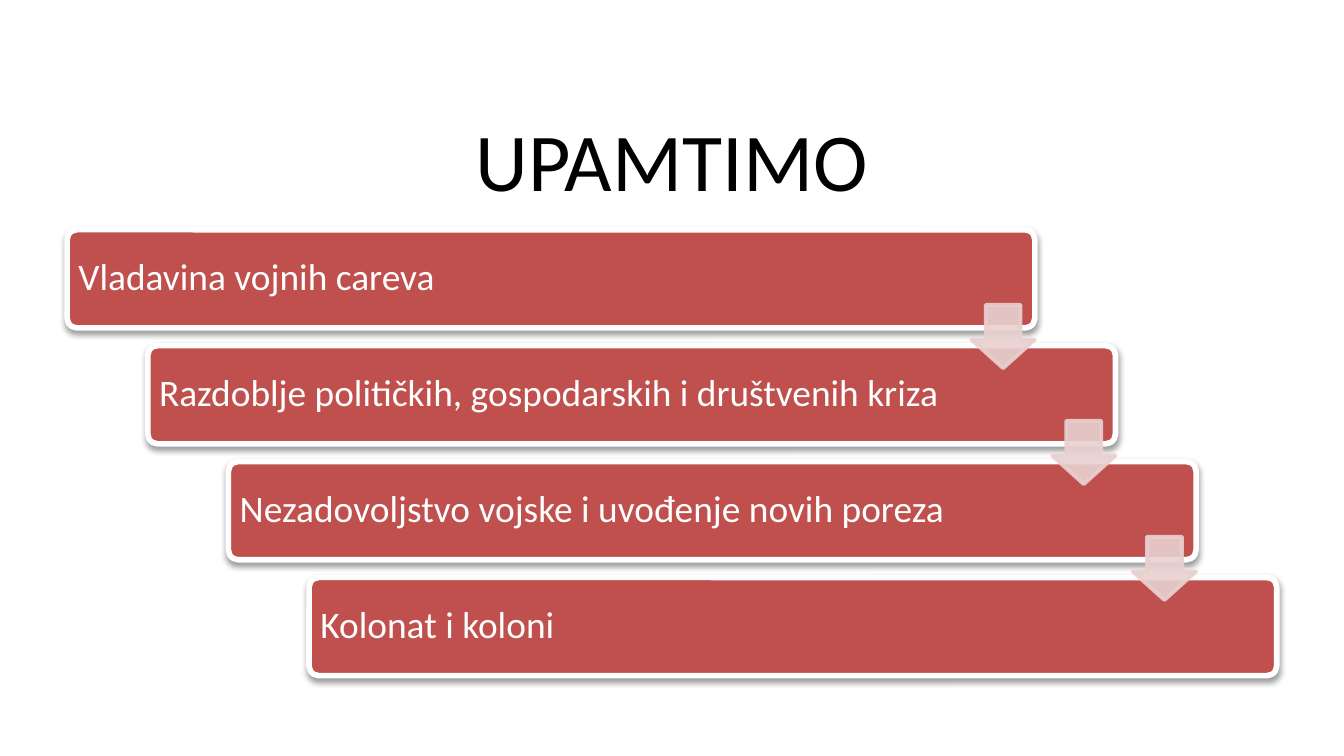
from lxml.etree import SubElement
from pptx import Presentation
from pptx.dml.color import RGBColor
from pptx.enum.shapes import MSO_SHAPE
from pptx.enum.text import MSO_ANCHOR, PP_ALIGN
from pptx.oxml.ns import qn
from pptx.util import Pt

COLORS = {"title": "000000", "bar": "C0504D", "light": "FFFFFF", "arrow": "E8D0D0", "shadow": "000000"}
STEPS = [
    "Vladavina vojnih careva",
    "Razdoblje političkih, gospodarskih i društvenih kriza",
    "Nezadovoljstvo vojske i uvođenje novih poreza",
    "Kolonat i koloni",
]
STEP_X, STEP_Y = 43.2, 62.1
BAR_LEFT, BAR_TOP, BAR_WIDTH, BAR_HEIGHT = 36, 123.1, 518.4, 52.6
ARROW_LEFT, ARROW_TOP, ARROW_SIZE = 520.4, 163.3, 34


class StaircaseSlide:
    font_name = "Calibri"

    def __init__(self, presentation):
        self.slide = presentation.slides.add_slide(presentation.slide_layouts[5])

    def set_text(self, text_frame, text, size, color, align):
        text_frame.text = text
        text_frame.word_wrap = True
        text_frame.vertical_anchor = MSO_ANCHOR.MIDDLE
        paragraph = text_frame.paragraphs[0]
        paragraph.alignment = align
        paragraph.line_spacing = 0.9
        font = paragraph.runs[0].font
        font.name = self.font_name
        font.size = Pt(size)
        font.color.rgb = RGBColor.from_string(COLORS[color])

    def title(self, text, left, top, width, height):
        title = self.slide.shapes.title
        title.left, title.top, title.width, title.height = Pt(left), Pt(top), Pt(width), Pt(height)
        self.set_text(title.text_frame, text, 44, "title", PP_ALIGN.CENTER)

    def shape(self, kind, left, top, width, height, fill, line, line_width):
        shape = self.slide.shapes.add_shape(kind, Pt(left), Pt(top), Pt(width), Pt(height))
        shape.shadow.inherit = False
        shape.fill.solid()
        shape.fill.fore_color.rgb = RGBColor.from_string(COLORS[fill])
        shape.line.color.rgb = RGBColor.from_string(COLORS[line])
        shape.line.width = Pt(line_width)
        return shape

    def bar(self, text, left, top):
        shape = self.shape(MSO_SHAPE.ROUNDED_RECTANGLE, left, top, BAR_WIDTH, BAR_HEIGHT, "bar", "light", 3)
        shape.adjustments[0] = 0.1
        effects = shape._element.spPr.find(qn("a:effectLst"))
        shadow = SubElement(effects, qn("a:outerShdw"), blurRad=str(Pt(3.1)), dist=str(Pt(1.6)),
                            dir="5400000", rotWithShape="0")
        color = SubElement(shadow, qn("a:srgbClr"), val=COLORS["shadow"])
        SubElement(color, qn("a:alpha"), val="38000")
        frame = shape.text_frame
        frame.margin_left = frame.margin_right = frame.margin_top = frame.margin_bottom = Pt(4.5)
        self.set_text(frame, text, 20, "light", PP_ALIGN.LEFT)

    def arrow(self, left, top):
        shape = self.shape(MSO_SHAPE.DOWN_ARROW, left, top, ARROW_SIZE, ARROW_SIZE, "arrow", "arrow", 2)
        shape.adjustments[0] = 0.55
        shape.adjustments[1] = 0.45
        for color in shape._element.spPr.iter(qn("a:srgbClr")):
            SubElement(color, qn("a:alpha"), val="90000")


def main():
    presentation = Presentation()
    presentation.slide_width, presentation.slide_height = Pt(720), Pt(405)
    staircase = StaircaseSlide(presentation)
    staircase.title("UPAMTIMO", 36, 60.5, 648, 56)
    for index, text in enumerate(STEPS):
        staircase.bar(text, BAR_LEFT + index * STEP_X, BAR_TOP + index * STEP_Y)
    for index in range(len(STEPS) - 1):
        staircase.arrow(ARROW_LEFT + index * STEP_X, ARROW_TOP + index * STEP_Y)
    presentation.save("out.pptx")


if __name__ == "__main__":
    main()
